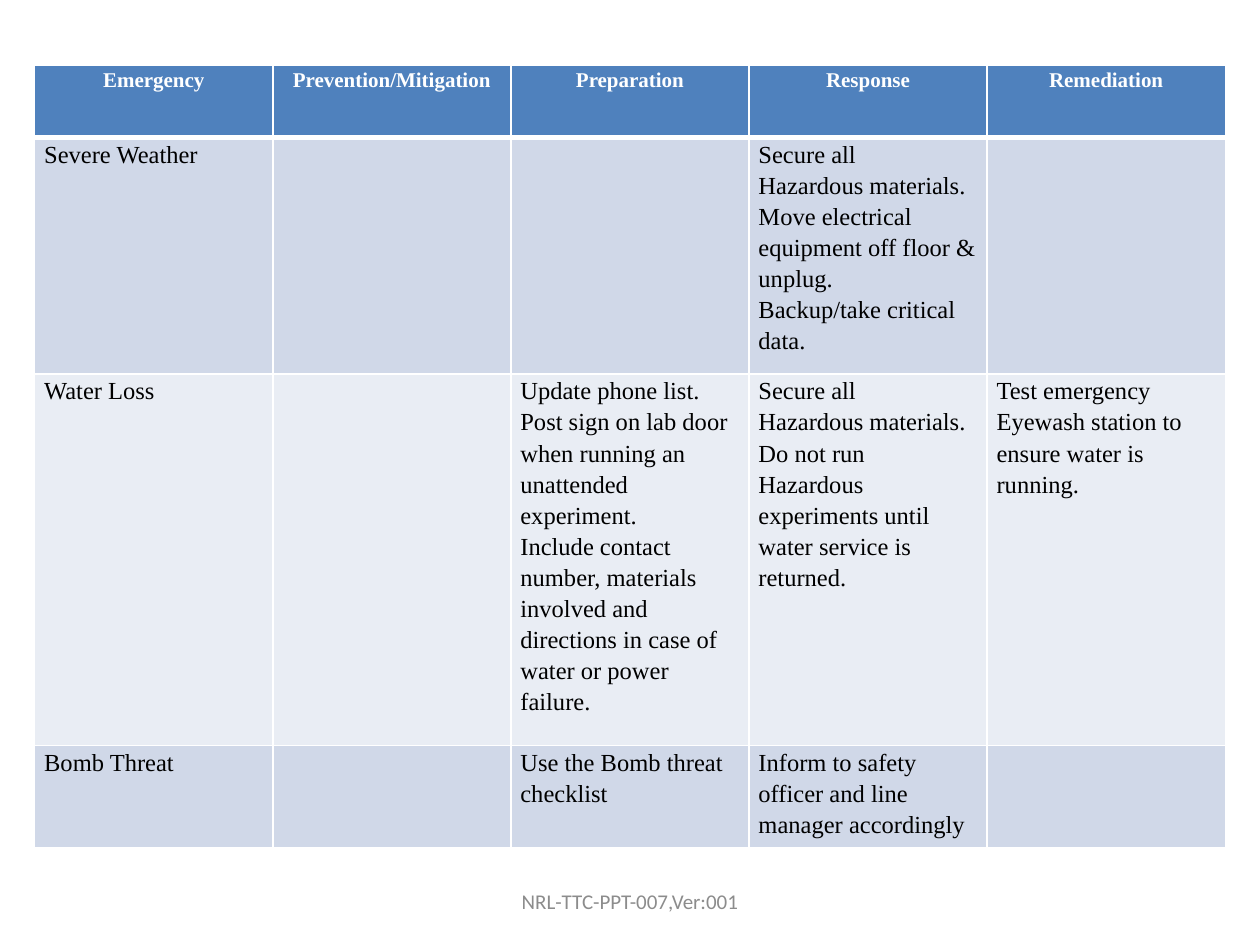
"""Build the emergency planning table slide."""
from dataclasses import dataclass

from lxml.etree import SubElement
from pptx import Presentation
from pptx.dml.color import RGBColor
from pptx.enum.text import MSO_ANCHOR as Anchor, PP_ALIGN as Align
from pptx.oxml import parse_xml
from pptx.oxml.ns import nsdecls, qn
from pptx.util import Cm, Pt


@dataclass(frozen=True)
class Theme:
    header: str = "4F81BD"
    bands: tuple = ("D0D8E8", "E9EDF4")
    white: str = "FFFFFF"
    ink: str = "000000"
    muted: str = "8C8C8C"
    table_font: str = "Times New Roman"
    footer_font: str = "Calibri"
    small: int = 12
    body: int = 14


def write(frame, text, *, font, size, color, bold=False, align=Align.LEFT, spacing=1.0):
    frame.word_wrap = True
    for index, line in enumerate(text.split("\n")):
        para = frame.add_paragraph() if index else frame.paragraphs[0]
        para.alignment = align
        para.line_spacing = spacing
        span = para.add_run()
        span.text = line
        span.font.name = font
        span.font.size = Pt(size)
        span.font.bold = bold
        span.font.color.rgb = RGBColor.from_string(color)


def add_borders(cell, color, widths):
    properties = cell._tc.get_or_add_tcPr()
    for position, (side, width) in enumerate(widths.items()):
        line = parse_xml(f'<a:ln{side} {nsdecls("a")} w="{Pt(width)}"/>')
        fill = SubElement(line, qn("a:solidFill"))
        SubElement(fill, qn("a:srgbClr"), val=color)
        properties.insert(position, line)


theme = Theme()
rows = [
    ["Emergency", "Prevention/Mitigation", "Preparation", "Response", "Remediation"],
    [
        "Severe Weather", "", "",
        "Secure all\nHazardous materials.\n"
        "Move electrical equipment off floor & unplug.\nBackup/take critical data.",
        "",
    ],
    [
        "Water Loss", "",
        "Update phone list.\nPost sign on lab door when running an unattended experiment.\n"
        "Include contact number, materials involved and directions in case of water or power failure.",
        "Secure all\nHazardous materials.\nDo not run\n"
        "Hazardous experiments until water service is returned.",
        "Test emergency\nEyewash station to ensure water is running.",
    ],
    [
        "Bomb Threat", "", "Use the Bomb threat checklist",
        "Inform to safety officer and line manager accordingly", "",
    ],
]
heights = [1.45, 4.77, 7.49, 2.06]
column_width = 4.8

deck = Presentation()
deck.slide_width, deck.slide_height = Cm(25.4), Cm(19.05)
page = deck.slides.add_slide(deck.slide_layouts[6])

table = page.shapes.add_table(
    len(rows), len(rows[0]), Cm(0.7), Cm(1.32),
    Cm(column_width * len(rows[0])), Cm(sum(heights)),
).table
for column in table.columns:
    column.width = Cm(column_width)

for row_index, (texts, height) in enumerate(zip(rows, heights)):
    is_header = row_index == 0
    table.rows[row_index].height = Cm(height)
    widths = {"L": 1, "R": 1, "T": 3 if row_index == 1 else 1, "B": 3 if is_header else 1}
    background = theme.header if is_header else theme.bands[(row_index - 1) % 2]
    for cell, text in zip(table.rows[row_index].cells, texts):
        cell.margin_left = cell.margin_right = Cm(0.13 if is_header else 0.19)
        cell.margin_top = cell.margin_bottom = 0
        cell.fill.solid()
        cell.fill.fore_color.rgb = RGBColor.from_string(background)
        add_borders(cell, theme.white, widths)
        if text:
            write(
                cell.text_frame, text, font=theme.table_font, spacing=1.15, bold=is_header,
                size=theme.small if is_header else theme.body,
                color=theme.white if is_header else theme.ink,
                align=Align.CENTER if is_header else Align.LEFT,
            )

footer = page.shapes.add_textbox(Cm(8.68), Cm(17.66), Cm(8.04), Cm(1.01))
footer.text_frame.vertical_anchor = Anchor.MIDDLE
write(
    footer.text_frame, "NRL-TTC-PPT-007,Ver:001", font=theme.footer_font,
    size=theme.small, color=theme.muted, align=Align.CENTER,
)

deck.save("out.pptx")
